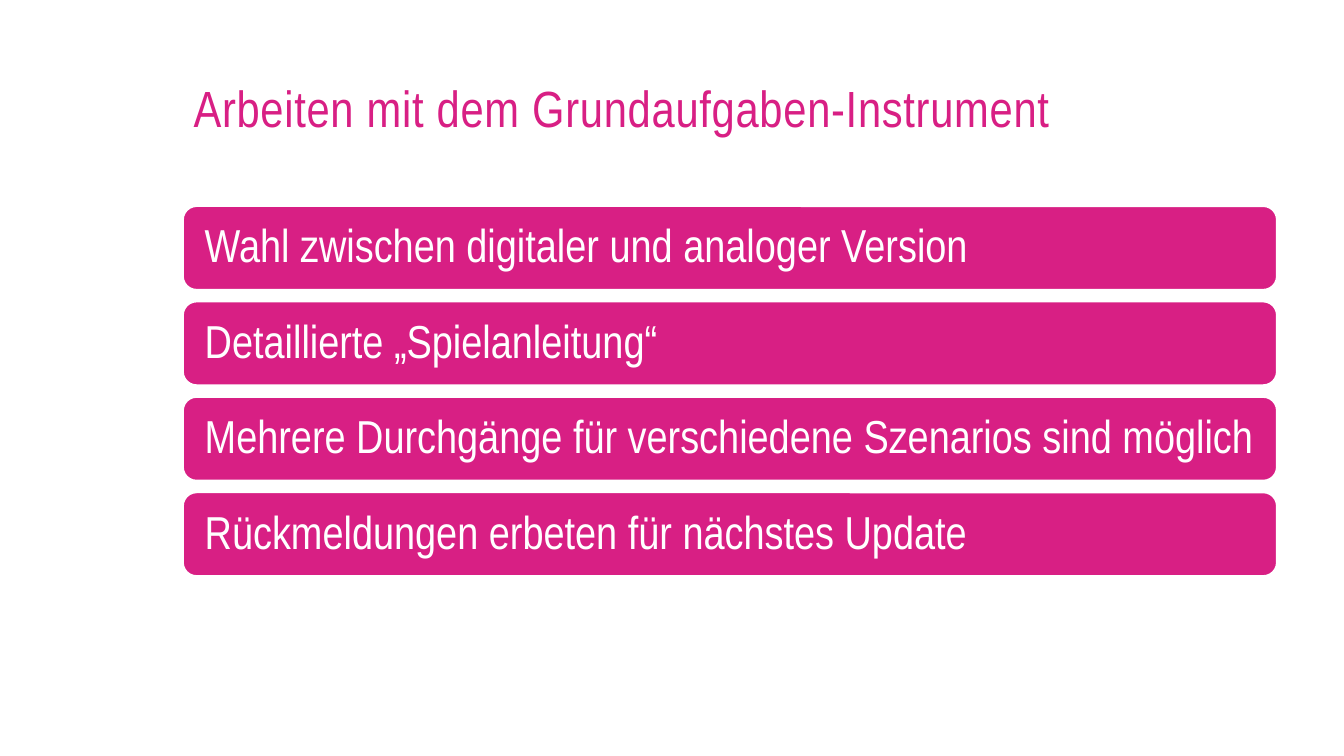
import pptx
import pptx.util
import pptx.dml.color
import pptx.enum.shapes
import pptx.enum.text
from dataclasses import dataclass

TITLE = "Arbeiten mit dem Grundaufgaben-Instrument"
STEPS = [
    "Wahl zwischen digitaler und analoger Version",
    "Detaillierte „Spielanleitung“",
    "Mehrere Durchgänge für verschiedene Szenarios sind möglich",
    "Rückmeldungen erbeten für nächstes Update",
]


@dataclass(frozen=True)
class Theme:
    font: str = "Arial Narrow"
    magenta: str = "D81F84"
    white: str = "FFFFFF"
    title_size: float = 36.3
    step_size: float = 33
    outline: float = 2


THEME = Theme()
SLIDE_WIDTH, SLIDE_HEIGHT = 13.33, 7.5
COLUMN_LEFT, COLUMN_WIDTH = 1.81, 10.86
TITLE_TOP, TITLE_HEIGHT = 0.7, 1.35
STEPS_TOP, STEPS_BOTTOM, BAR_HEIGHT = 2.04, 5.72, 0.84
PITCH = (STEPS_BOTTOM - STEPS_TOP - BAR_HEIGHT) / (len(STEPS) - 1)


def color(value):
    return pptx.dml.color.RGBColor.from_string(value)


def place(shape, top, height):
    shape.left, shape.top, shape.width, shape.height = (
        pptx.util.Inches(length) for length in (COLUMN_LEFT, top, COLUMN_WIDTH, height)
    )


def write(shape, text, size, text_color, anchor, side, edge):
    frame = shape.text_frame
    frame.text = text
    frame.word_wrap = True
    frame.auto_size = pptx.enum.text.MSO_AUTO_SIZE.NONE
    frame.vertical_anchor = anchor
    frame.margin_left = frame.margin_right = pptx.util.Inches(side)
    frame.margin_top = frame.margin_bottom = pptx.util.Inches(edge)
    paragraph = frame.paragraphs[0]
    paragraph.alignment = pptx.enum.text.PP_ALIGN.LEFT
    paragraph.font.name = THEME.font
    paragraph.font.size = pptx.util.Pt(size)
    paragraph.font.color.rgb = color(text_color)
    return paragraph


def add_title(slide):
    title = slide.shapes.title
    place(title, TITLE_TOP, TITLE_HEIGHT)
    paragraph = write(title, TITLE, THEME.title_size, THEME.magenta,
                      pptx.enum.text.MSO_ANCHOR.TOP, 0.11, 0.06)
    paragraph.runs[0].font._element.set("spc", "50")


def add_step(slide, row, text):
    bar = slide.shapes.add_shape(pptx.enum.shapes.MSO_SHAPE.ROUNDED_RECTANGLE, 0, 0, 0, 0)
    place(bar, STEPS_TOP + row * PITCH, BAR_HEIGHT)
    bar.shadow.inherit = False
    bar.fill.solid()
    bar.fill.fore_color.rgb = color(THEME.magenta)
    bar.line.color.rgb = color(THEME.white)
    bar.line.width = pptx.util.Pt(THEME.outline)
    paragraph = write(bar, text, THEME.step_size, THEME.white,
                      pptx.enum.text.MSO_ANCHOR.MIDDLE, 0.18, 0.14)
    paragraph.line_spacing = 0.9


def main():
    presentation = pptx.Presentation()
    presentation.slide_width = pptx.util.Inches(SLIDE_WIDTH)
    presentation.slide_height = pptx.util.Inches(SLIDE_HEIGHT)
    slide = presentation.slides.add_slide(presentation.slide_layouts.get_by_name("Title Only"))
    add_title(slide)
    for row, text in enumerate(STEPS):
        add_step(slide, row, text)
    presentation.save("out.pptx")


if __name__ == "__main__":
    main()
